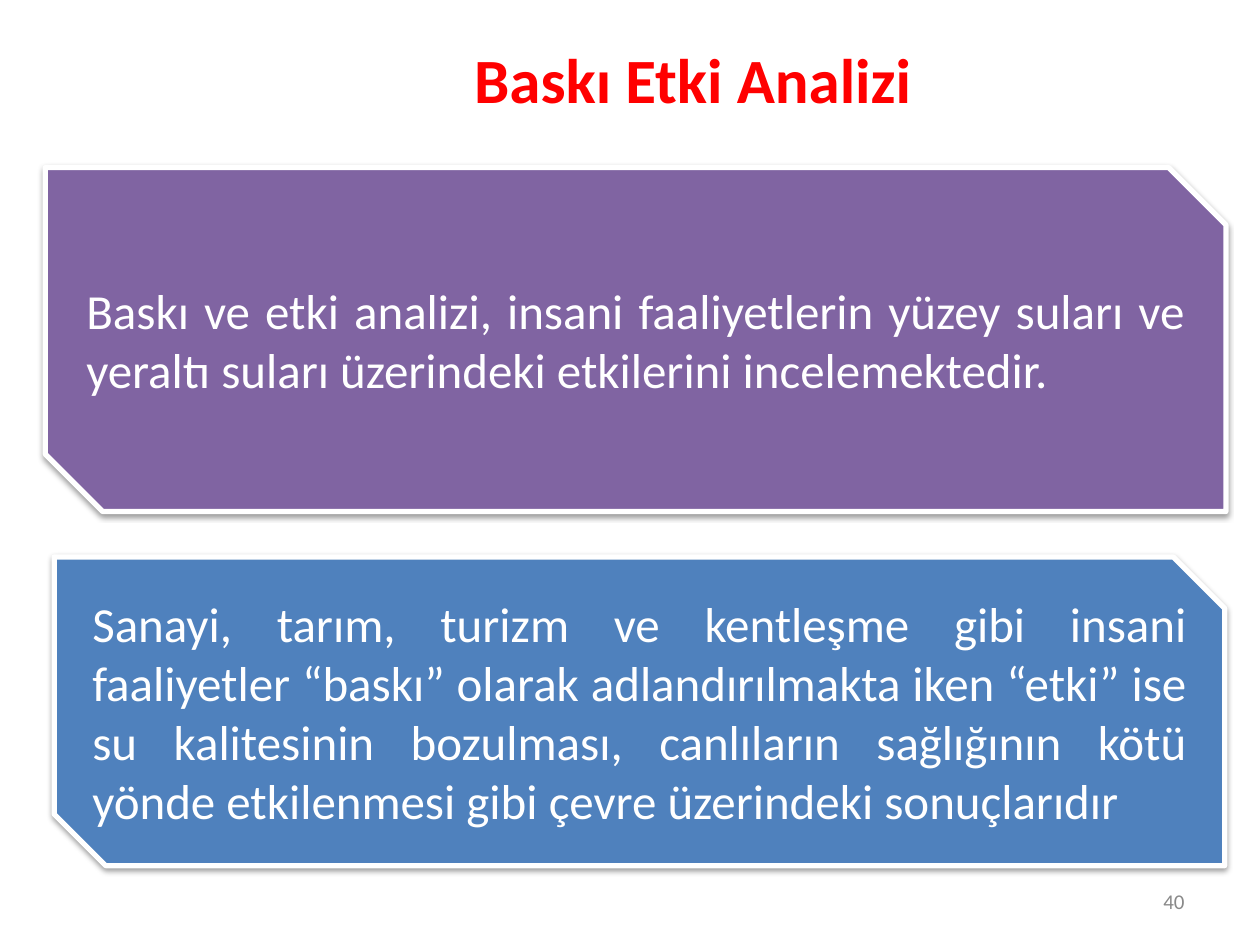
from pptx import Presentation
from pptx.dml.color import RGBColor
from pptx.enum.shapes import MSO_SHAPE
from pptx.enum.text import MSO_ANCHOR, PP_ALIGN
from pptx.oxml import parse_xml
from pptx.oxml.ns import nsdecls, qn
from pptx.util import Inches, Pt

SNIPPED = MSO_SHAPE.SNIP_2_DIAG_RECTANGLE
MIDDLE = MSO_ANCHOR.MIDDLE
CENTER, RIGHT, JUSTIFY = PP_ALIGN.CENTER, PP_ALIGN.RIGHT, PP_ALIGN.JUSTIFY
TITLE_ONLY = 5
SHADOW = (
    f'<a:outerShdw {nsdecls("a")} blurRad="{Pt(3.1)}" dist="{Pt(1.6)}" dir="5400000" '
    'rotWithShape="0"><a:srgbClr val="000000"><a:alpha val="38000"/></a:srgbClr></a:outerShdw>'
)


def color(value):
    return RGBColor.from_string(value)


class SlideBuilder:
    """Holds the text style and the slide being built."""

    font_name = "Calibri"
    white = "FFFFFF"

    def __init__(self, slide):
        self.slide = slide

    def add_text(self, frame, text, size, ink, align, bold=False):
        frame.word_wrap = True
        frame.vertical_anchor = MIDDLE
        paragraph = frame.paragraphs[0]
        paragraph.alignment = align
        run = paragraph.add_run()
        run.text = text
        run.font.name = self.font_name
        run.font.size = Pt(size)
        run.font.bold = bold
        run.font.color.rgb = color(ink)

    def title(self, text, left, top, width, height):
        heading = self.slide.shapes.title
        heading.left, heading.top = Inches(left), Inches(top)
        heading.width, heading.height = Inches(width), Inches(height)
        self.add_text(heading.text_frame, text, 36, "FF0000", CENTER, bold=True)

    def page_number(self, text, left, top, width, height):
        number = self.slide.shapes.add_textbox(
            Inches(left), Inches(top), Inches(width), Inches(height))
        self.add_text(number.text_frame, text, 12, "898989", RIGHT)

    def panel(self, text, fill, left, top, width, height):
        panel = self.slide.shapes.add_shape(
            SNIPPED, Inches(left), Inches(top), Inches(width), Inches(height))
        panel.fill.solid()
        panel.fill.fore_color.rgb = color(fill)
        panel.line.color.rgb = color(self.white)
        panel.line.width = Pt(3)
        panel.shadow.inherit = False
        panel._element.spPr.find(qn("a:effectLst")).append(parse_xml(SHADOW))
        self.add_text(panel.text_frame, text, 28, self.white, JUSTIFY)


def main():
    deck = Presentation()
    deck.slide_width, deck.slide_height = Inches(10), Inches(7.5)
    builder = SlideBuilder(deck.slides.add_slide(deck.slide_layouts[TITLE_ONLY]))
    builder.title("Baskı Etki Analizi", 1, 0, 9, 1.25)
    builder.page_number("40", 7.17, 6.95, 2.33, 0.4)
    builder.panel(
        "Sanayi, tarım, turizm ve kentleşme gibi insani faaliyetler “baskı” olarak "
        "adlandırılmakta iken “etki” ise su kalitesinin bozulması, canlıların sağlığının "
        "kötü yönde etkilenmesi gibi çevre üzerindeki sonuçlarıdır",
        "4F81BD", 0.43, 4.42, 9.29, 2.45)
    builder.panel(
        "Baskı ve etki analizi, insani faaliyetlerin yüzey suları ve yeraltı suları "
        "üzerindeki etkilerini incelemektedir.",
        "8064A2", 0.36, 1.33, 9.37, 2.73)
    deck.save("out.pptx")


if __name__ == "__main__":
    main()
